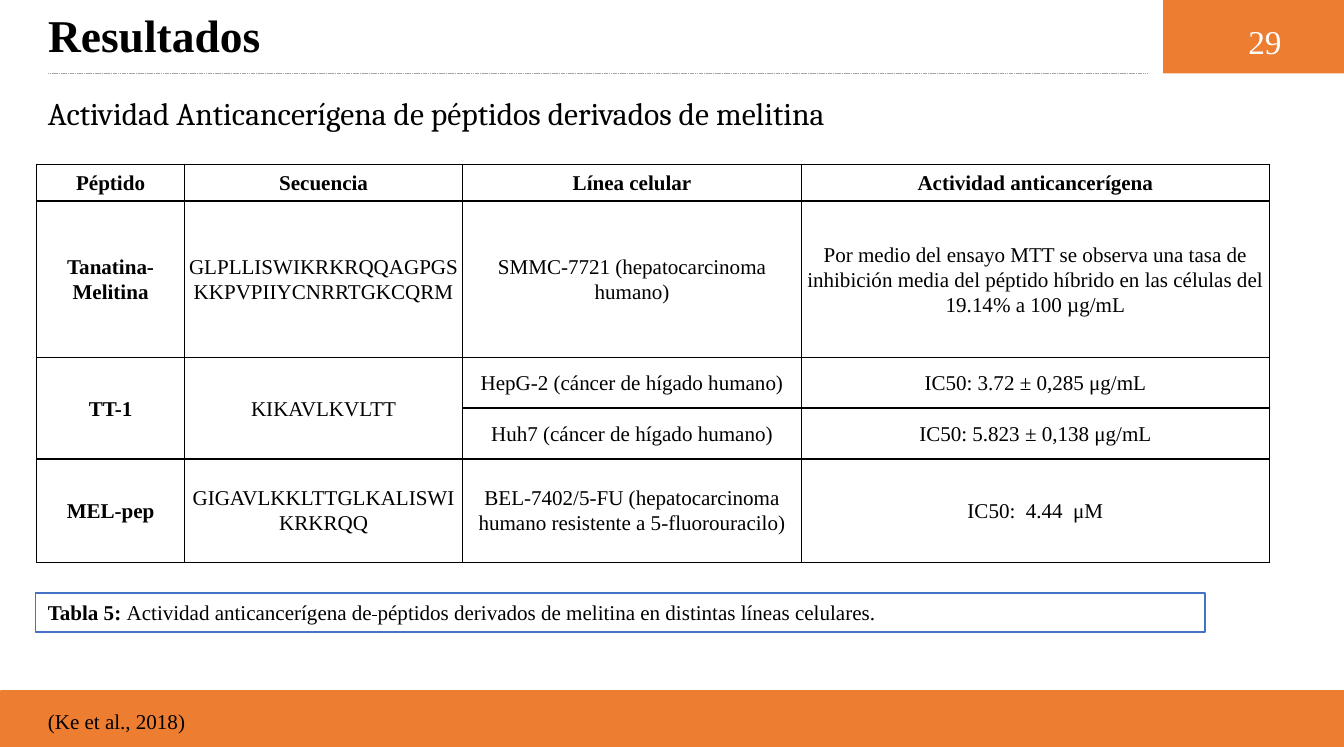
from lxml.etree import SubElement
from pptx import Presentation
from pptx.dml.color import RGBColor
from pptx.enum.dml import MSO_LINE
from pptx.enum.shapes import MSO_CONNECTOR, MSO_SHAPE
from pptx.enum.text import MSO_ANCHOR, PP_ALIGN
from pptx.oxml.ns import qn
from pptx.util import Inches, Pt

TITLE = "Resultados"
SUBTITLE = "Actividad Anticancerígena de péptidos derivados de melitina"
PAGE_NUMBER = "29"
CITATION = "(Ke et al., 2018)"
# Each part: text, bold, struck through
CAPTION = [
    ("Tabla 5: ", True, False),
    ("Actividad anticancerígena de", False, False),
    (" ", False, True),
    ("péptidos derivados de melitina en distintas líneas celulares.", False, False),
]
# None continues the cell above
PEPTIDES = [
    ("Péptido", "Secuencia", "Línea celular", "Actividad anticancerígena"),
    ("Tanatina-Melitina", "GLPLLISWIKRKRQQAGPGSKKPVPIIYCNRRTGKCQRM",
     "SMMC-7721 (hepatocarcinoma humano)",
     "Por medio del ensayo MTT se observa una tasa de inhibición media del "
     "péptido híbrido en las células del 19.14% a 100 µg/mL"),
    ("TT-1", "KIKAVLKVLTT", "HepG-2 (cáncer de hígado humano)",
     "IC50: 3.72 ± 0,285 μg/mL"),
    (None, None, "Huh7 (cáncer de hígado humano)", "IC50: 5.823 ± 0,138 μg/mL"),
    ("MEL-pep", "GIGAVLKKLTTGLKALISWIKRKRQQ",
     "BEL-7402/5-FU (hepatocarcinoma humano resistente a 5-fluorouracilo)",
     "IC50:  4.44  μM"),
]
COLUMN_WIDTHS = (1.17, 2.2, 2.68, 3.7)
ROW_HEIGHTS = (0.29, 1.24, 0.4, 0.4, 0.82)

WIDTH, HEIGHT = 10.63, 5.91
LEFT, INSET = 0.28, 0.1
HEADING_WIDTH, HEADING_HEIGHT = 8.49, 0.45
HEADER_HEIGHT, FOOTER_HEIGHT = 0.58, 0.44
BADGE_WIDTH = 1.43

SERIF, HEADING_SERIF = "Times New Roman", "Cambria"
BLACK = RGBColor(0, 0, 0)
WHITE = RGBColor(255, 255, 255)
ORANGE = RGBColor(0xED, 0x7D, 0x31)
BLUE = RGBColor(0x44, 0x72, 0xC4)
GREY = RGBColor(0xA6, 0xA6, 0xA6)


def inches(*lengths):
    return [Inches(length) for length in lengths]


def style(paragraph, size, color=BLACK, bold=False, face=SERIF,
          align=PP_ALIGN.LEFT, spacing=1.0):
    paragraph.alignment = align
    paragraph.line_spacing = spacing
    font = paragraph.font
    font.name, font.size, font.bold = face, Pt(size), bold
    font.color.rgb = color


def add_label(slide, text, box, size, anchor=MSO_ANCHOR.TOP, **look):
    frame = slide.shapes.add_textbox(*inches(*box)).text_frame
    frame.word_wrap = True
    frame.vertical_anchor = anchor
    frame.text = text
    style(frame.paragraphs[0], size, **look)


def add_block(slide, box, fill, line=None):
    block = slide.shapes.add_shape(MSO_SHAPE.RECTANGLE, *inches(*box))
    block.shadow.inherit = False
    block.fill.solid()
    block.fill.fore_color.rgb = fill
    if line is None:
        block.line.fill.background()
    else:
        block.line.color.rgb = line
        block.line.width = Pt(1)
    return block


def add_header(slide):
    rule = slide.shapes.add_connector(
        MSO_CONNECTOR.STRAIGHT,
        *inches(LEFT + INSET, HEADER_HEIGHT, 9.08, HEADER_HEIGHT))
    rule.line.color.rgb = GREY
    rule.line.width = Pt(0.25)
    rule.line.dash_style = MSO_LINE.SQUARE_DOT
    rule.line.dash_style = MSO_LINE.DASH
    rule.line._ln.find(qn("a:prstDash")).set("val", "sysDash")
    SubElement(rule._element.spPr, qn("a:effectLst"))
    add_block(slide, (WIDTH - BADGE_WIDTH, 0, BADGE_WIDTH, HEADER_HEIGHT), ORANGE)

    title = slide.shapes.title
    title.left, title.top, title.width, title.height = inches(
        LEFT, 0.09, HEADING_WIDTH, HEADING_HEIGHT)
    title.text_frame.text = TITLE
    title.text_frame.vertical_anchor = MSO_ANCHOR.MIDDLE
    style(title.text_frame.paragraphs[0], 25.9, bold=True, spacing=0.8)

    add_label(slide, SUBTITLE, (LEFT, 0.69, HEADING_WIDTH, HEADING_HEIGHT), 18,
              MSO_ANCHOR.MIDDLE, face=HEADING_SERIF, spacing=0.9)
    add_label(slide, PAGE_NUMBER, (9.73, 0.12, 0.55, 0.42), 19,
              color=WHITE, align=PP_ALIGN.CENTER)


def add_borders(cell):
    """Draw a thin black line on all four sides; borders must precede the fill."""
    properties = cell._tc.get_or_add_tcPr()
    for position, side in enumerate(("lnL", "lnR", "lnT", "lnB")):
        border = SubElement(properties, qn(f"a:{side}"), w=str(Pt(1)))
        properties.insert(position, border)
        fill = SubElement(border, qn("a:solidFill"))
        SubElement(fill, qn("a:srgbClr"), val=str(BLACK))


def add_peptide_table(slide):
    table = slide.shapes.add_table(
        len(PEPTIDES), len(COLUMN_WIDTHS),
        *inches(0.29, 1.3, sum(COLUMN_WIDTHS), sum(ROW_HEIGHTS))).table
    for column, width in zip(table.columns, COLUMN_WIDTHS):
        column.width = Inches(width)
    for row, height in zip(table.rows, ROW_HEIGHTS):
        row.height = Inches(height)
    for r, peptide in enumerate(PEPTIDES):
        for c, text in enumerate(peptide):
            cell = table.cell(r, c)
            cell.fill.solid()
            cell.fill.fore_color.rgb = WHITE
            add_borders(cell)
            cell.margin_left = cell.margin_right = Inches(0.01)
            cell.margin_top = cell.margin_bottom = 0
            cell.vertical_anchor = MSO_ANCHOR.MIDDLE
            if text is None:
                table.cell(r - 1, c).merge(cell)
                continue
            cell.text = text
            style(cell.text_frame.paragraphs[0], 12, bold=r == 0 or c == 0,
                  align=PP_ALIGN.CENTER, spacing=1.07)


def add_caption(slide):
    frame = add_block(slide, (LEFT, 4.69, 9.25, 0.31), WHITE, BLUE).text_frame
    frame.word_wrap = True
    frame.vertical_anchor = MSO_ANCHOR.MIDDLE
    paragraph = frame.paragraphs[0]
    style(paragraph, 12)
    for text, bold, struck in CAPTION:
        run = paragraph.add_run()
        run.text = text
        run.font.bold = bold
        if struck:
            run.font._element.set("strike", "sngStrike")


def add_footer(slide):
    add_block(slide, (0.01, HEIGHT - FOOTER_HEIGHT, WIDTH - 0.01, FOOTER_HEIGHT),
              ORANGE, ORANGE)
    add_label(slide, CITATION, (LEFT, 5.56, 6.25, 0.3), 12)


def main():
    deck = Presentation()
    deck.slide_width, deck.slide_height = inches(WIDTH, HEIGHT)
    slide = deck.slides.add_slide(deck.slide_layouts.get_by_name("Title Only"))
    add_header(slide)
    add_peptide_table(slide)
    add_caption(slide)
    add_footer(slide)
    deck.save("out.pptx")


if __name__ == "__main__":
    main()
